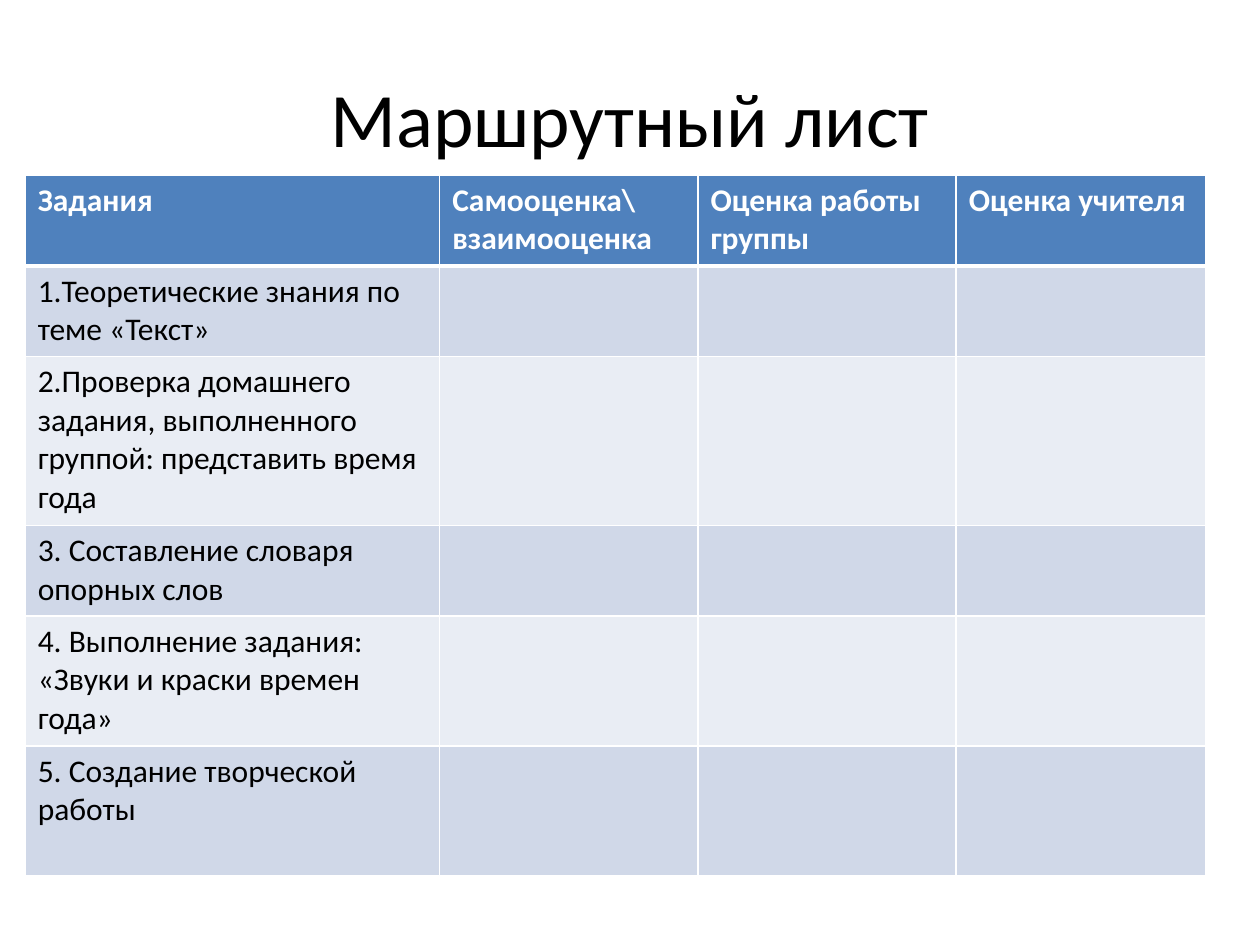
import pptx
import pptx.dml.color
import pptx.enum.text
import pptx.oxml
import pptx.oxml.ns
import pptx.util
from pptx.util import Inches

COLORS = {
    "text": "000000",
    "white": "FFFFFF",
    "header": "4F81BD",
    "odd_row": "D0D8E8",
    "even_row": "E9EDF4",
}
HEADERS = ["Задания", "Самооценка\\ взаимооценка", "Оценка работы группы", "Оценка учителя"]
TASKS = [
    "1.Теоретические знания по теме «Текст»",
    "2.Проверка домашнего задания, выполненного группой: представить время года",
    "3. Составление словаря опорных слов",
    "4. Выполнение задания: «Звуки и краски времен года»",
    "5. Создание творческой работы",
]
COLUMN_WIDTHS = [3.29, 2.05, 2.05, 1.98]
ROW_HEIGHTS = [0.72, 0.72, 1.34, 0.72, 1.03, 1.03]


def rgb(name):
    return pptx.dml.color.RGBColor.from_string(COLORS[name])


def write_text(text_frame, text, size=18, color="text", bold=False, align=None):
    paragraph = text_frame.paragraphs[0]
    paragraph.alignment = align
    run = paragraph.add_run()
    run.text = text
    run.font.name = "Calibri"
    run.font.size = pptx.util.Pt(size)
    run.font.bold = bold
    run.font.color.rgb = rgb(color)


def set_borders(cell, **widths):
    """Draw white cell borders; widths in points are keyed L, R, T and B."""
    properties = cell._tc.get_or_add_tcPr()
    for index, side in enumerate("LRTB"):
        line = pptx.oxml.parse_xml(
            f'<a:ln{side} {pptx.oxml.ns.nsdecls("a")} w="{pptx.util.Pt(widths.get(side, 1))}">'
            f'<a:solidFill><a:srgbClr val="{COLORS["white"]}"/></a:solidFill></a:ln{side}>'
        )
        properties.insert(index, line)


class SlideBuilder:
    """Holds the slide and the shared style of its elements."""

    def __init__(self, slide):
        self.slide = slide

    def add_title(self, text, left, top, width, height):
        shape = self.slide.shapes.add_textbox(
            Inches(left), Inches(top), Inches(width), Inches(height)
        )
        text_frame = shape.text_frame
        text_frame.word_wrap = True
        text_frame.vertical_anchor = pptx.enum.text.MSO_ANCHOR.MIDDLE
        write_text(text_frame, text, size=44, align=pptx.enum.text.PP_ALIGN.CENTER)

    def add_table(self, rows, left, top, column_widths, row_heights):
        table = self.slide.shapes.add_table(
            len(rows), len(column_widths), Inches(left), Inches(top),
            Inches(sum(column_widths)), Inches(sum(row_heights)),
        ).table
        for column, width in zip(table.columns, column_widths):
            column.width = Inches(width)
        for row_index, (row, height) in enumerate(zip(table.rows, row_heights)):
            row.height = Inches(height)
            for cell, text in zip(row.cells, rows[row_index]):
                self.fill_cell(cell, text, row_index)

    def fill_cell(self, cell, text, row_index):
        is_header = row_index == 0
        band = "odd_row" if row_index % 2 else "even_row"
        cell.fill.solid()
        cell.fill.fore_color.rgb = rgb("header" if is_header else band)
        set_borders(cell, T=3 if row_index == 1 else 1, B=3 if is_header else 1)
        if text:
            write_text(cell.text_frame, text, color="white" if is_header else "text", bold=is_header)


def main():
    presentation = pptx.Presentation()
    presentation.slide_width = Inches(10)
    presentation.slide_height = Inches(7.5)
    builder = SlideBuilder(presentation.slides.add_slide(presentation.slide_layouts[6]))
    builder.add_title("Маршрутный лист", 0.5, 0.3, 9, 1.25)
    empty_marks = [""] * (len(HEADERS) - 1)
    rows = [HEADERS] + [[task] + empty_marks for task in TASKS]
    builder.add_table(rows, 0.2, 1.39, COLUMN_WIDTHS, ROW_HEIGHTS)
    presentation.save("out.pptx")


if __name__ == "__main__":
    main()
